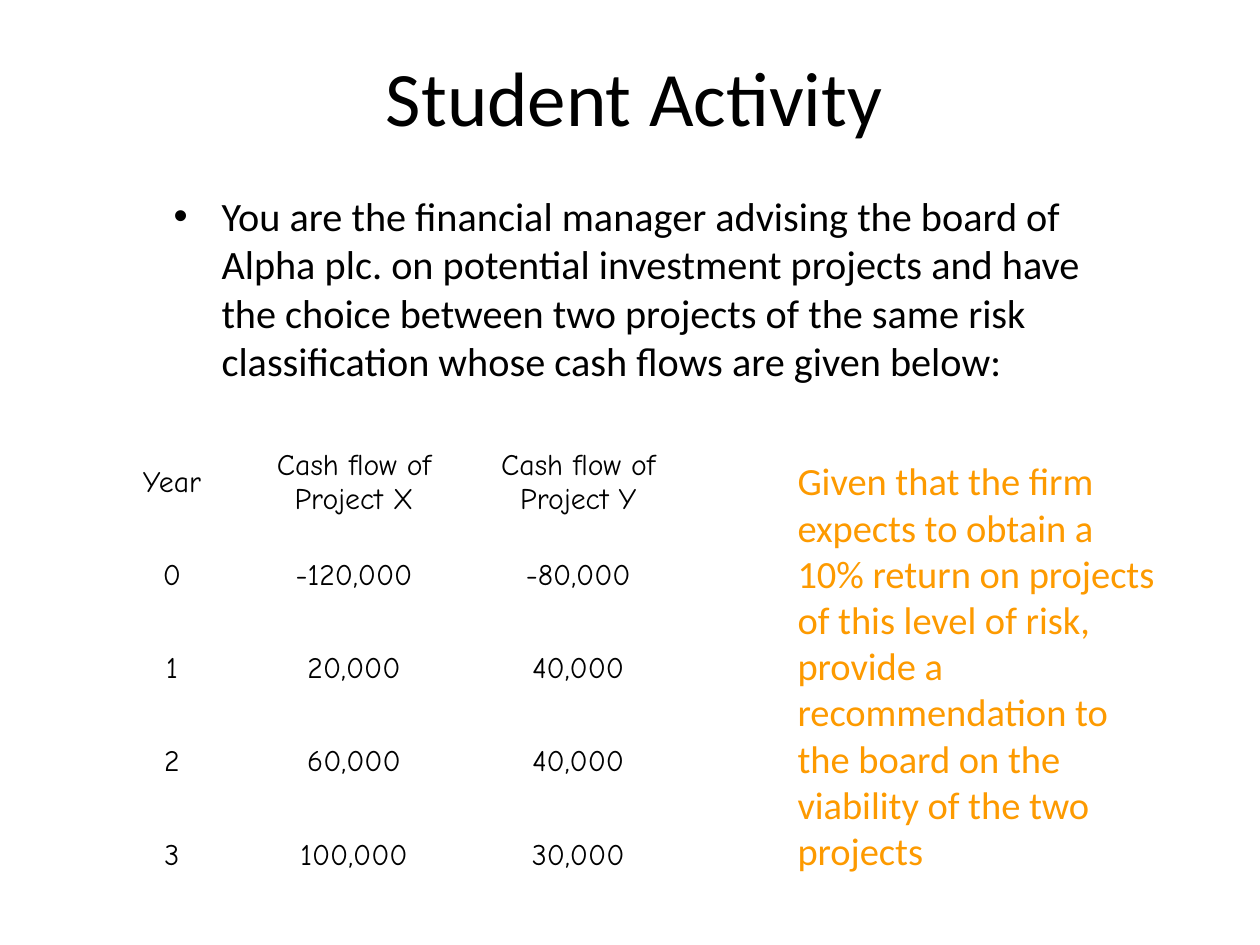
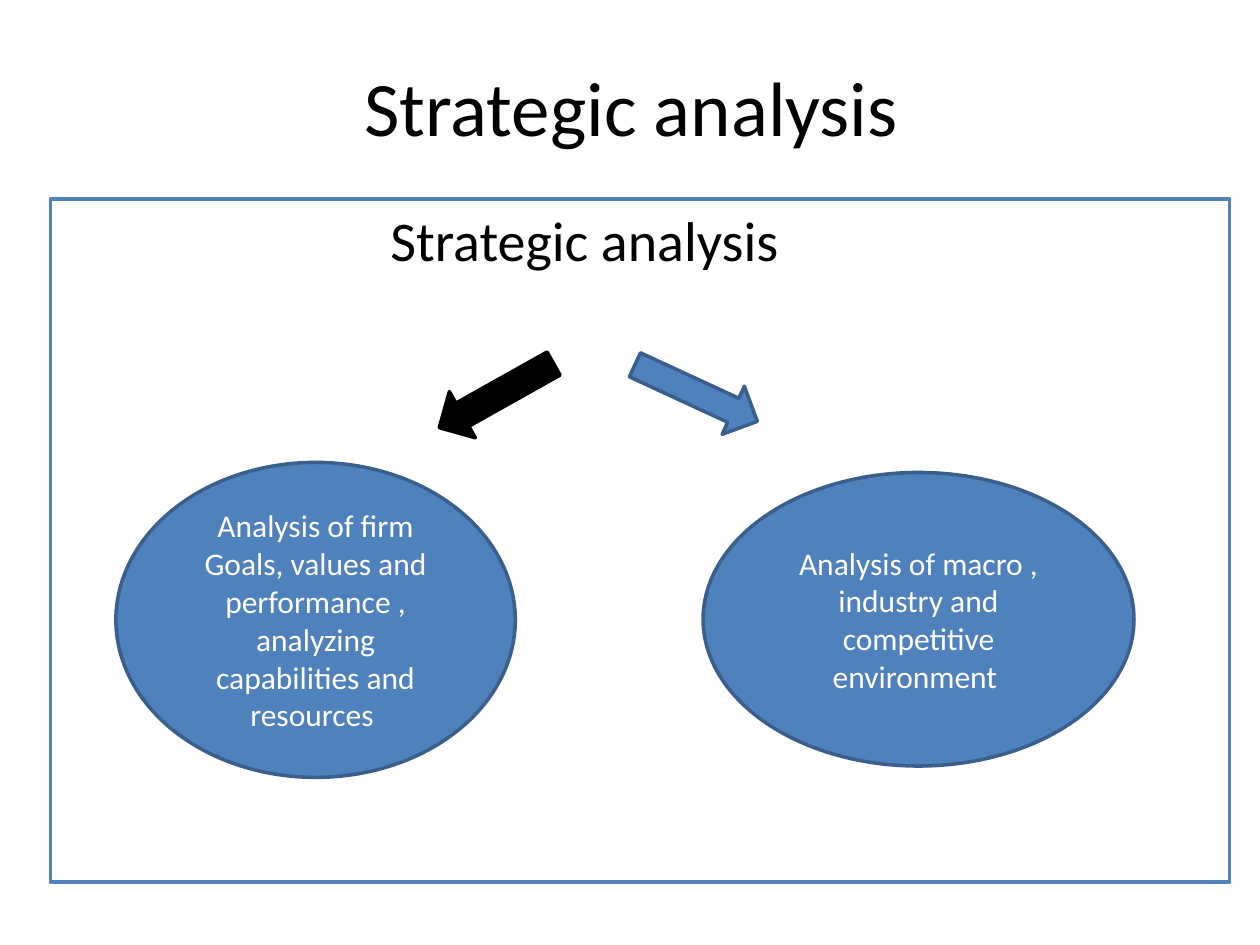
from lxml import etree
from pptx import Presentation
from pptx.dml.color import RGBColor
from pptx.enum import shapes, text
from pptx.oxml import ns
from pptx.util import Inches, Pt

FONT, TABLE_FONT = "Calibri", "Comic Neue"
BLACK, WHITE, BLUE, DARK_BLUE, ORANGE = "000000", "FFFFFF", "4F81BD", "3A5F8C", "FD9A00"
LINE_WIDTH = 2
CENTER = text.PP_ALIGN.CENTER
LEFT = text.PP_ALIGN.LEFT
TOP = text.MSO_ANCHOR.TOP
MIDDLE = text.MSO_ANCHOR.MIDDLE
DEFAULT_INSETS = (0.1, 0.05, 0.1, 0.05)
NARROW_INSETS = (0.1, 0.05, 0.04, 0.05)

ACTIVITY_TITLE = "Student Activity"
SCENARIO = (
    "You are the financial manager advising the board of Alpha plc. on potential "
    "investment projects and have the choice between two projects of the same risk "
    "classification whose cash flows are given below:"
)
TASK = (
    "Given that the firm expects to obtain a 10% return on projects of this level of "
    "risk, provide a recommendation to the board on the viability of the two projects"
)
CASH_FLOWS = [
    ("Year", "Cash flow of Project X", "Cash flow of Project Y"),
    ("0", "-120,000", "-80,000"),
    ("1", "20,000", "40,000"),
    ("2", "60,000", "40,000"),
    ("3", "100,000", "30,000"),
]
COLUMN_WIDTHS = (1.07, 1.82, 1.74)
ROW_HEIGHT = 0.74

ANALYSIS_TITLE = "Strategic analysis "
ANALYSIS_HEADING = "Strategic analysis"
ARROWS = [
    ((3.42, 2.93, 1.04, 0.42), 150.7, BLACK, BLACK),
    ((4.99, 2.91, 1.07, 0.42), 24.8, BLUE, DARK_BLUE),
]
ANALYSES = [
    ((0.92, 3.67, 3.17, 2.5), [
        "Analysis of firm",
        "Goals, values and performance , analyzing capabilities and resources ",
    ]),
    ((5.58, 3.75, 3.42, 2.33), [
        "Analysis of macro , industry and competitive environment ",
    ]),
]


def color(value):
    """Turn a hex string into a colour."""
    return RGBColor.from_string(value)


def inches(box):
    """Turn a tuple of numbers into lengths."""
    return [Inches(value) for value in box]


def style_paragraph(paragraph, size, ink=BLACK, align=LEFT, font=FONT):
    """Set the font and alignment of a paragraph."""
    paragraph.alignment = align
    paragraph.font.name = font
    paragraph.font.size = Pt(size)
    paragraph.font.color.rgb = color(ink)


def write(shape, lines, size, ink=BLACK, align=LEFT, anchor=TOP, insets=DEFAULT_INSETS):
    """Fill a shape with wrapped paragraphs and return its text frame."""
    frame = shape.text_frame
    frame.text = "\n".join(lines)
    frame.word_wrap = True
    frame.auto_size = text.MSO_AUTO_SIZE.NONE
    frame.vertical_anchor = anchor
    (frame.margin_left, frame.margin_top,
     frame.margin_right, frame.margin_bottom) = inches(insets)
    for paragraph in frame.paragraphs:
        style_paragraph(paragraph, size, ink, align)
    return frame


def indent(paragraph, left, first=0, bullet=None):
    """Set the indents of a paragraph and give it a bullet if asked."""
    properties = paragraph._p.get_or_add_pPr()
    properties.set("marL", str(Inches(left)))
    properties.set("indent", str(Inches(first)))
    if bullet:
        etree.SubElement(properties, ns.qn("a:buFont"), typeface="Arial")
        etree.SubElement(properties, ns.qn("a:buChar"), char=bullet)


def add_slide(presentation, title, box, insets=DEFAULT_INSETS):
    """Add a slide with a placed and styled title."""
    slide = presentation.slides.add_slide(presentation.slide_layouts[5])
    shape = slide.shapes.title
    shape.left, shape.top, shape.width, shape.height = inches(box)
    write(shape, [title], 44, align=CENTER, anchor=MIDDLE, insets=insets)
    return slide


def add_shape(slide, kind, box, fill, line):
    """Add a preset shape with a flat fill and outline."""
    shape = slide.shapes.add_shape(kind, *inches(box))
    shape.shadow.inherit = False
    shape.fill.solid()
    shape.fill.fore_color.rgb = color(fill)
    shape.line.color.rgb = color(line)
    shape.line.width = Pt(LINE_WIDTH)
    return shape


def add_borders(cell, ink):
    """Draw all four borders of a table cell."""
    properties = cell._tc.get_or_add_tcPr()
    for position, side in enumerate(("lnL", "lnR", "lnT", "lnB")):
        line = etree.Element(ns.qn("a:" + side), w=str(Pt(LINE_WIDTH)))
        fill = etree.SubElement(line, ns.qn("a:solidFill"))
        etree.SubElement(fill, ns.qn("a:srgbClr"), val=ink)
        properties.insert(position, line)


def add_cash_flow_table(slide):
    """Add the table of yearly cash flows."""
    box = (0.83, 3.46, sum(COLUMN_WIDTHS), ROW_HEIGHT * len(CASH_FLOWS))
    table = slide.shapes.add_table(
        len(CASH_FLOWS), len(COLUMN_WIDTHS), *inches(box)).table
    table.first_row = table.horz_banding = False
    for column, width in zip(table.columns, COLUMN_WIDTHS):
        column.width = Inches(width)
    for row, values in zip(table.rows, CASH_FLOWS):
        row.height = Inches(ROW_HEIGHT)
        for cell, value in zip(row.cells, values):
            cell.text = value
            cell.vertical_anchor = MIDDLE
            cell.margin_left = cell.margin_right = Inches(0.04)
            cell.margin_top = cell.margin_bottom = Inches(0.04)
            cell.fill.background()
            add_borders(cell, WHITE)
            style_paragraph(cell.text_frame.paragraphs[0], 17, align=CENTER, font=TABLE_FONT)


def build_activity(presentation):
    """Build the slide with the investment exercise."""
    slide = add_slide(presentation, ACTIVITY_TITLE, (0.98, 0.2, 8.05, 1.12), NARROW_INSETS)
    scenario = slide.shapes.add_textbox(*inches((0.98, 1.47, 8.05, 1.82)))
    paragraph = write(scenario, [SCENARIO], 23, insets=NARROW_INSETS).paragraphs[0]
    paragraph.space_before = Pt(4.6)
    indent(paragraph, 0.68, -0.38, "•")
    add_cash_flow_table(slide)
    task = slide.shapes.add_textbox(*inches((6.33, 3.66, 2.93, 3.24)))
    write(task, [TASK], 22, ORANGE, anchor=MIDDLE, insets=(0, 0, 0, 0))


def build_analysis(presentation):
    """Build the slide with the two branches of strategic analysis."""
    slide = add_slide(presentation, ANALYSIS_TITLE, (0.53, 0, 9.1, 1.67))
    preset = shapes.MSO_SHAPE
    panel = add_shape(slide, preset.RECTANGLE, (0.4, 1.58, 9.36, 5.42), WHITE, BLUE)
    paragraph = write(panel, [ANALYSIS_HEADING], 32).paragraphs[0]
    paragraph.space_before = Pt(6.4)
    indent(paragraph, 2.6)
    for box, rotation, fill, line in ARROWS:
        arrow = add_shape(slide, preset.RIGHT_ARROW, box, fill, line)
        arrow.rotation = rotation
    for box, lines in ANALYSES:
        ellipse = add_shape(slide, preset.OVAL, box, BLUE, DARK_BLUE)
        write(ellipse, lines, 18, WHITE, CENTER, MIDDLE)


def main():
    """Build and save the presentation."""
    presentation = Presentation()
    presentation.slide_width, presentation.slide_height = inches((10, 7.5))
    build_activity(presentation)
    build_analysis(presentation)
    presentation.save("out.pptx")


if __name__ == "__main__":
    main()
